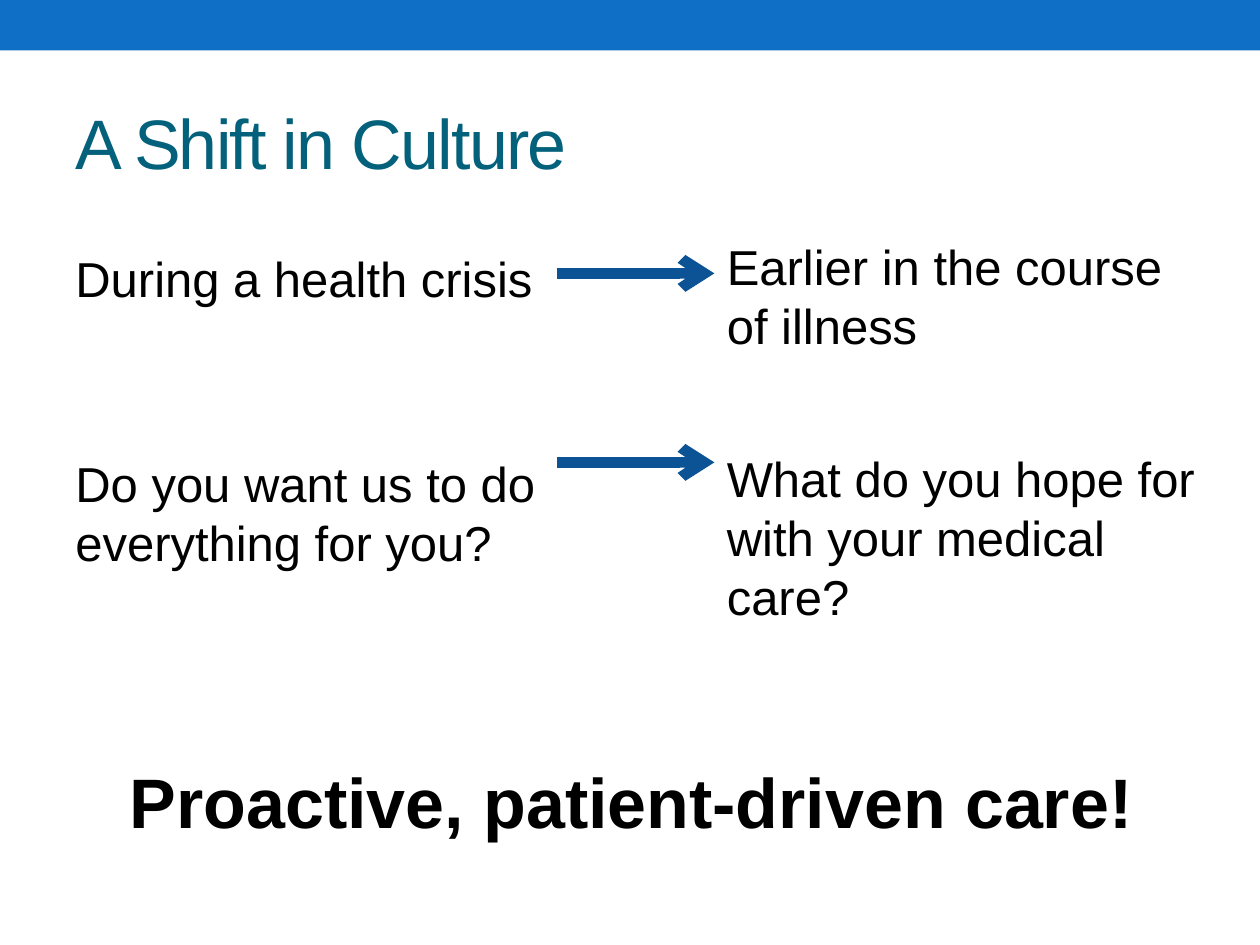
from lxml.etree import SubElement
from pptx import Presentation
from pptx.dml.color import RGBColor
from pptx.enum.shapes import MSO_CONNECTOR, MSO_SHAPE
from pptx.enum.text import MSO_ANCHOR, PP_ALIGN
from pptx.oxml.ns import qn
from pptx.util import Inches, Pt

COLORS = {"bar": "0F6FC6", "title": "04617B", "text": "000000", "arrow": "0B5394"}

prs = Presentation()
prs.slide_width, prs.slide_height = Inches(10), Inches(7.5)
s = prs.slides.add_slide(prs.slide_layouts[6])


def color(name):
    return RGBColor.from_string(COLORS[name])


def add_text(box, paragraphs, gap=0, ink="text", align=PP_ALIGN.LEFT,
             anchor=MSO_ANCHOR.TOP, **font):
    tf = s.shapes.add_textbox(*map(Inches, box)).text_frame
    tf.word_wrap, tf.vertical_anchor = True, anchor
    for i, text in enumerate(paragraphs):
        p = tf.paragraphs[0] if i == 0 else tf.add_paragraph()
        p.alignment = align
        p.space_before = Pt(gap if i else 0)
        r = p.add_run()
        r.text = text
        r.font.color.rgb = color(ink)
        for key, value in {"name": "Arial", **font}.items():
            setattr(r.font, key, value)
    return tf


# Top bar
bar = s.shapes.add_shape(MSO_SHAPE.RECTANGLE, 0, 0, prs.slide_width, Inches(0.4))
bar.shadow.inherit = False
bar.fill.solid()
bar.fill.fore_color.rgb = color("bar")
bar.line.fill.background()

# Title, slightly condensed
title = add_text((0.5, 0.58, 9, 1.08), ["A Shift in Culture"], ink="title",
                 anchor=MSO_ANCHOR.MIDDLE, size=Pt(40))
title.paragraphs[0].runs[0].font._element.set("spc", "-100")

# Before and after columns
columns = [
    ((0.5, 1.92, 4.08, 2.92), 84,
     ["During a health crisis", "Do you want us to do everything for you?"]),
    ((5.67, 1.83, 4.08, 3.42), 54,
     ["Earlier in the course of illness",
      "What do you hope for with your medical care?"]),
]
for box, gap, paragraphs in columns:
    add_text(box, paragraphs, gap, size=Pt(28))

# Arrows from before to after
for y in (2.17, 3.67):
    arrow = s.shapes.add_connector(MSO_CONNECTOR.STRAIGHT, Inches(4.42), Inches(y),
                                   Inches(5.67), Inches(y))
    arrow.line.color.rgb = color("arrow")
    arrow.line.width = Pt(6)
    SubElement(arrow.line._get_or_add_ln(), qn("a:tailEnd"), type="arrow")
    SubElement(arrow._element.spPr, qn("a:effectLst"))

# Closing message
add_text((0.47, 5.97, 9.08, 0.77), ["Proactive, patient-driven care!"],
         align=PP_ALIGN.CENTER, size=Pt(40), bold=True)

prs.save("out.pptx")
